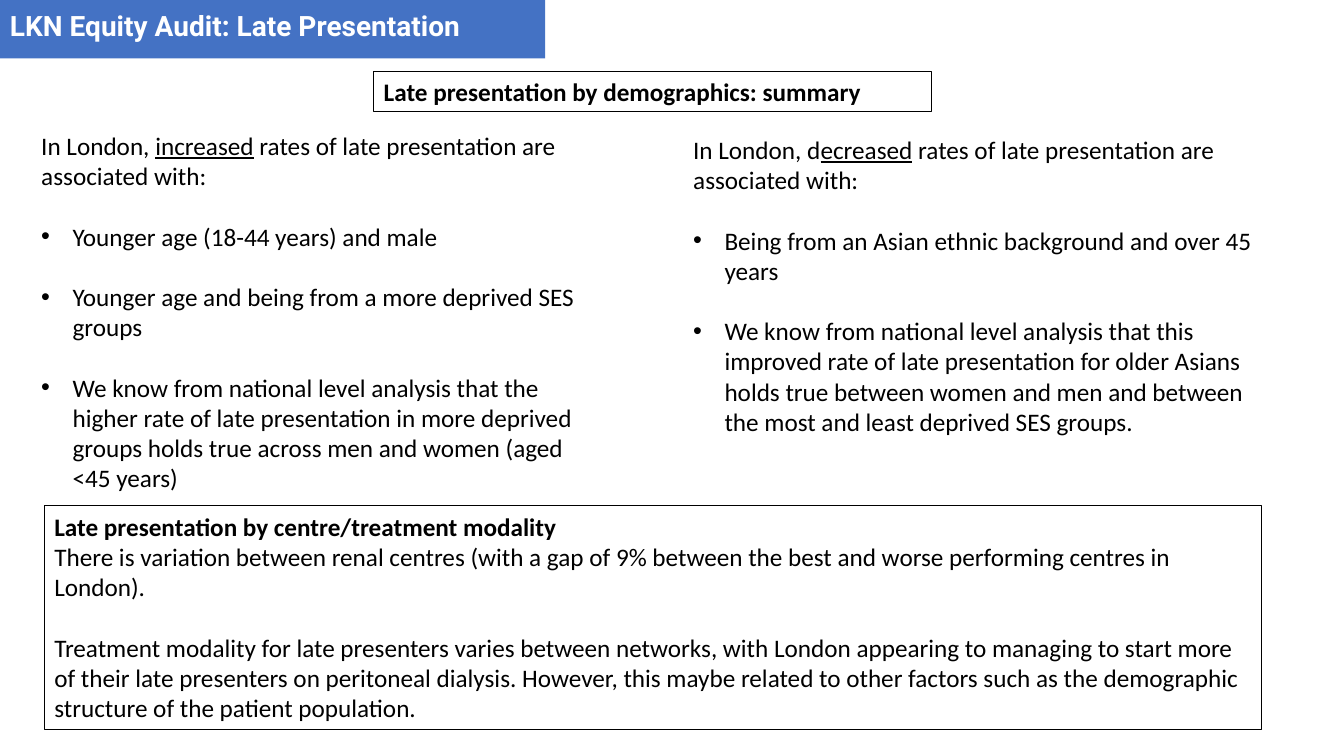
from dataclasses import dataclass

from lxml import etree
from pptx import Presentation
from pptx import util as u
from pptx.dml.color import RGBColor
from pptx.enum import shapes, text
from pptx.oxml.ns import qn


@dataclass(frozen=True)
class Theme:
    blue = RGBColor(0x44, 0x72, 0xC4)
    black = RGBColor(0, 0, 0)
    white = RGBColor(0xFF, 0xFF, 0xFF)
    title = {"name": "Roboto", "size": u.Pt(20), "bold": True}
    body = {"name": "Calibri", "size": u.Pt(18), "bold": False}
    strong = {"name": "Calibri", "size": u.Pt(18), "bold": True}
    gap = u.Pt(21.6)
    indent = u.Cm(0.79)
    border = u.Pt(0.75)


def assign(target, values):
    for name, value in values.items():
        setattr(target, name, value)


class SlideBuilder:
    def __init__(self, deck, theme):
        self.theme = theme
        self.slide = deck.slides.add_slide(deck.slide_layouts[5])

    def add_span(self, para, words, style, color, **extra):
        span = para.add_run()
        span.text = words
        assign(span.font, {**style, **extra})
        span.font.color.rgb = color

    def prepare(self, box, anchor):
        frame = box.text_frame
        assign(frame, {
            "word_wrap": True,
            "auto_size": text.MSO_AUTO_SIZE.NONE,
            "vertical_anchor": anchor,
            "margin_left": u.Cm(0.25),
            "margin_right": u.Cm(0.25),
            "margin_top": u.Cm(0.13),
            "margin_bottom": u.Cm(0.13),
        })
        frame.paragraphs[0].alignment = text.PP_ALIGN.LEFT
        return frame

    def place(self, box, area):
        assign(box, dict(zip(("left", "top", "width", "height"), map(u.Cm, area))))

    def banner(self, words, area):
        box = self.slide.shapes.title
        self.place(box, area)
        box.fill.solid()
        box.fill.fore_color.rgb = self.theme.blue
        frame = self.prepare(box, text.MSO_ANCHOR.MIDDLE)
        self.add_span(frame.paragraphs[0], words, self.theme.title, self.theme.white)

    def bullet(self, para):
        props = para._p.get_or_add_pPr()
        props.set("marL", str(self.theme.indent))
        props.set("indent", str(-self.theme.indent))
        etree.SubElement(props, qn("a:buFont"), typeface="Arial")
        etree.SubElement(props, qn("a:buChar"), char="•")

    def findings(self, intro, points, area):
        box = self.slide.shapes.add_textbox(*map(u.Cm, area))
        frame = self.prepare(box, text.MSO_ANCHOR.TOP)
        for position, words in enumerate(intro):
            self.add_span(frame.paragraphs[0], words, self.theme.body,
                          self.theme.black, underline=position == 1)
        for point in points:
            para = frame.add_paragraph()
            para.space_before = self.theme.gap
            self.bullet(para)
            self.add_span(para, point, self.theme.body, self.theme.black)

    def framed(self, heading, paragraphs, area):
        box = self.slide.shapes.add_shape(
            shapes.MSO_SHAPE.RECTANGLE, *map(u.Cm, area))
        box.shadow.inherit = False
        box.fill.background()
        box.line.color.rgb = self.theme.black
        box.line.width = self.theme.border
        frame = self.prepare(box, text.MSO_ANCHOR.TOP)
        self.add_span(frame.paragraphs[0], heading, self.theme.strong, self.theme.black)
        for position, words in enumerate(paragraphs):
            para = frame.add_paragraph()
            para.alignment = text.PP_ALIGN.LEFT
            para.space_before = self.theme.gap if position else u.Pt(0)
            self.add_span(para, words, self.theme.body, self.theme.black)


def main():
    deck = Presentation()
    assign(deck, {"slide_width": u.Cm(33.87), "slide_height": u.Cm(19.05)})
    page = SlideBuilder(deck, Theme())

    page.banner("LKN Equity Audit: Late Presentation", (0, -0.18, 13.74, 1.65))

    ending = " rates of late presentation are associated with:"
    page.findings(
        ("In London, ", "increased", ending),
        ("Younger age (18-44 years) and male",
         "Younger age and being from a more deprived SES groups",
         "We know from national level analysis that the higher rate of late "
         "presentation in more deprived groups holds true across men and women "
         "(aged <45 years)"),
        (0.79, 3.15, 14.68, 15.65))
    page.findings(
        ("In London, d", "ecreased", ending),
        ("Being from an Asian ethnic background and over 45 years",
         "We know from national level analysis that this improved rate of late "
         "presentation for older Asians holds true between women and men and "
         "between the most and least deprived SES groups."),
        (17.22, 3.25, 14.68, 9.5))

    page.framed("Late presentation by demographics: summary", (),
                (9.42, 1.8, 14.05, 1.02))
    page.framed(
        "Late presentation by centre/treatment modality",
        ("There is variation between renal centres (with a gap of 9% between the "
         "best and worse performing centres in London).",
         "Treatment modality for late presenters varies between networks, with "
         "London appearing to managing to start more of their late presenters on "
         "peritoneal dialysis. However, this maybe related to other factors such "
         "as the demographic structure of the patient population."),
        (1.12, 12.75, 30.68, 5.64))

    deck.save("out.pptx")


if __name__ == "__main__":
    main()
